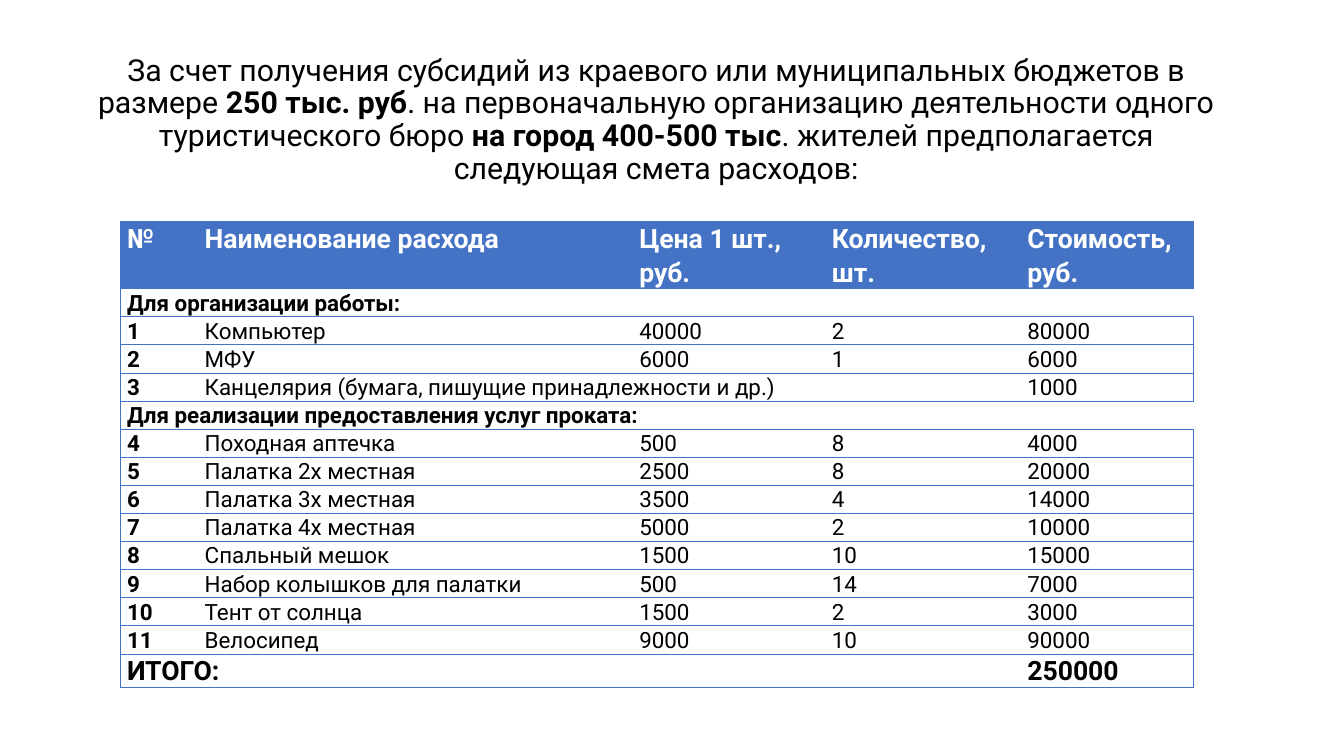
from lxml.etree import SubElement
from pptx import Presentation
from pptx.dml.color import RGBColor
from pptx.enum.text import MSO_ANCHOR, MSO_AUTO_SIZE, PP_ALIGN
from pptx.oxml.ns import qn
from pptx.util import Inches, Pt

TITLE = [
    ("За счет получения субсидий из краевого или муниципальных бюджетов в размере ", False),
    ("250 тыс. руб", True),
    (". на первоначальную организацию деятельности одного туристического бюро ", False),
    ("на город 400-500 тыс", True),
    (". жителей предполагается следующая смета расходов:", False),
]
COSTS = [
    ["№", "Наименование расхода", "Цена 1 шт., руб.", "Количество, шт.", "Стоимость, руб."],
    ["Для организации работы:", None, None, None, None],
    ["1", "Компьютер", "40000", "2", "80000"],
    ["2", "МФУ", "6000", "1", "6000"],
    ["3", "Канцелярия (бумага, пишущие принадлежности и др.)", None, None, "1000"],
    ["Для реализации предоставления услуг проката:", None, None, None, None],
    ["4", "Походная аптечка", "500", "8", "4000"],
    ["5", "Палатка 2х местная", "2500", "8", "20000"],
    ["6", "Палатка 3х местная", "3500", "4", "14000"],
    ["7", "Палатка 4х местная", "5000", "2", "10000"],
    ["8", "Спальный мешок", "1500", "10", "15000"],
    ["9", "Набор колышков для палатки", "500", "14", "7000"],
    ["10", "Тент от солнца", "1500", "2", "3000"],
    ["11", "Велосипед", "9000", "10", "90000"],
    ["ИТОГО:", None, None, None, "250000"],
]
COLS = [5.78, 32.33, 14.33, 14.55, 12.9]
ROWS = [8.8] + [3.72] * 13 + [4.4]


def color(code):
    return RGBColor.from_string(code)


def assign(item, values):
    for name, value in values.items():
        setattr(item, name, value)


class Deck:
    font = "Roboto"
    blue = "4472C4"
    black = "000000"
    white = "FFFFFF"

    def __init__(self, wide, high):
        self.show = Presentation()
        assign(self.show, {"slide_width": Inches(wide), "slide_height": Inches(high)})
        self.slide = self.show.slides.add_slide(self.show.slide_layouts[5])

    def across(self, share):
        return round(self.show.slide_width * share / 100)

    def down(self, share):
        return round(self.show.slide_height * share / 100)

    def place(self, left, top, width, height):
        return self.across(left), self.down(top), self.across(width), self.down(height)

    def label(self, para, text, size, bold, ink):
        run = para.add_run()
        run.text = text
        assign(run.font, {"name": self.font, "size": Pt(size), "bold": bold})
        run.font.color.rgb = color(ink)

    def title(self, parts, box, size):
        shape = self.slide.shapes.title
        assign(shape, dict(zip(("left", "top", "width", "height"), self.place(*box))))
        frame = shape.text_frame
        assign(frame, {"word_wrap": True, "auto_size": MSO_AUTO_SIZE.NONE,
                       "vertical_anchor": MSO_ANCHOR.MIDDLE})
        para = frame.paragraphs[0]
        assign(para, {"alignment": PP_ALIGN.CENTER, "line_spacing": 0.9})
        for text, bold in parts:
            self.label(para, text, size, bold, self.black)

    def border(self, cell, sides):
        props = cell._tc.get_or_add_tcPr()
        for side in "LRTB":
            line = SubElement(props, qn(f"a:ln{side}"), w=str(Pt(0.5)))
            if side in sides:
                fill = SubElement(line, qn("a:solidFill"))
                SubElement(fill, qn("a:srgbClr"), val=self.blue)
            else:
                SubElement(line, qn("a:noFill"))

    def cell(self, cell, text, sides, size, bold, ink, fill, align):
        assign(cell, {"margin_left": Inches(0.07), "margin_right": Inches(0.07),
                      "margin_top": 0, "margin_bottom": 0})
        self.border(cell, sides)
        if fill:
            cell.fill.solid()
            cell.fill.fore_color.rgb = color(fill)
        else:
            cell.fill.background()
        if text:
            para = cell.text_frame.paragraphs[0]
            assign(para, {"alignment": align, "line_spacing": 1.07})
            self.label(para, text, size, bold, ink)

    def table(self, data, left, top, cols, rows):
        box = self.place(left, top, sum(cols), sum(rows))
        grid = self.slide.shapes.add_table(len(rows), len(cols), *box).table
        assign(grid, {"first_row": False, "horz_banding": False})
        for col, share in zip(grid.columns, cols):
            col.width = self.across(share)
        for row, share in zip(grid.rows, rows):
            row.height = self.down(share)
        last_row, last_col = len(rows) - 1, len(cols) - 1
        for r, line in enumerate(data):
            head = r == 0
            large = r in (0, last_row)
            for c, text in enumerate(line):
                sides = "TB" + "L" * (c == 0) + "R" * (c == last_col)
                align = PP_ALIGN.LEFT if head and c == 2 else PP_ALIGN.JUSTIFY
                self.cell(grid.cell(r, c), text, sides, 19 if large else 16,
                          large or c == 0, self.white if head else self.black,
                          self.blue if head else None, align)
            blank = [c for c, text in enumerate(line) if text is None]
            if blank:
                grid.cell(r, blank[0] - 1).merge(grid.cell(r, blank[-1]))


def main():
    deck = Deck(13.33, 7.5)
    deck.title(TITLE, (5.7, 6.27, 86.27, 19.33), 21.6)
    deck.table(COSTS, 8.93, 29.33, COLS, ROWS)
    deck.show.save("out.pptx")


if __name__ == "__main__":
    main()
